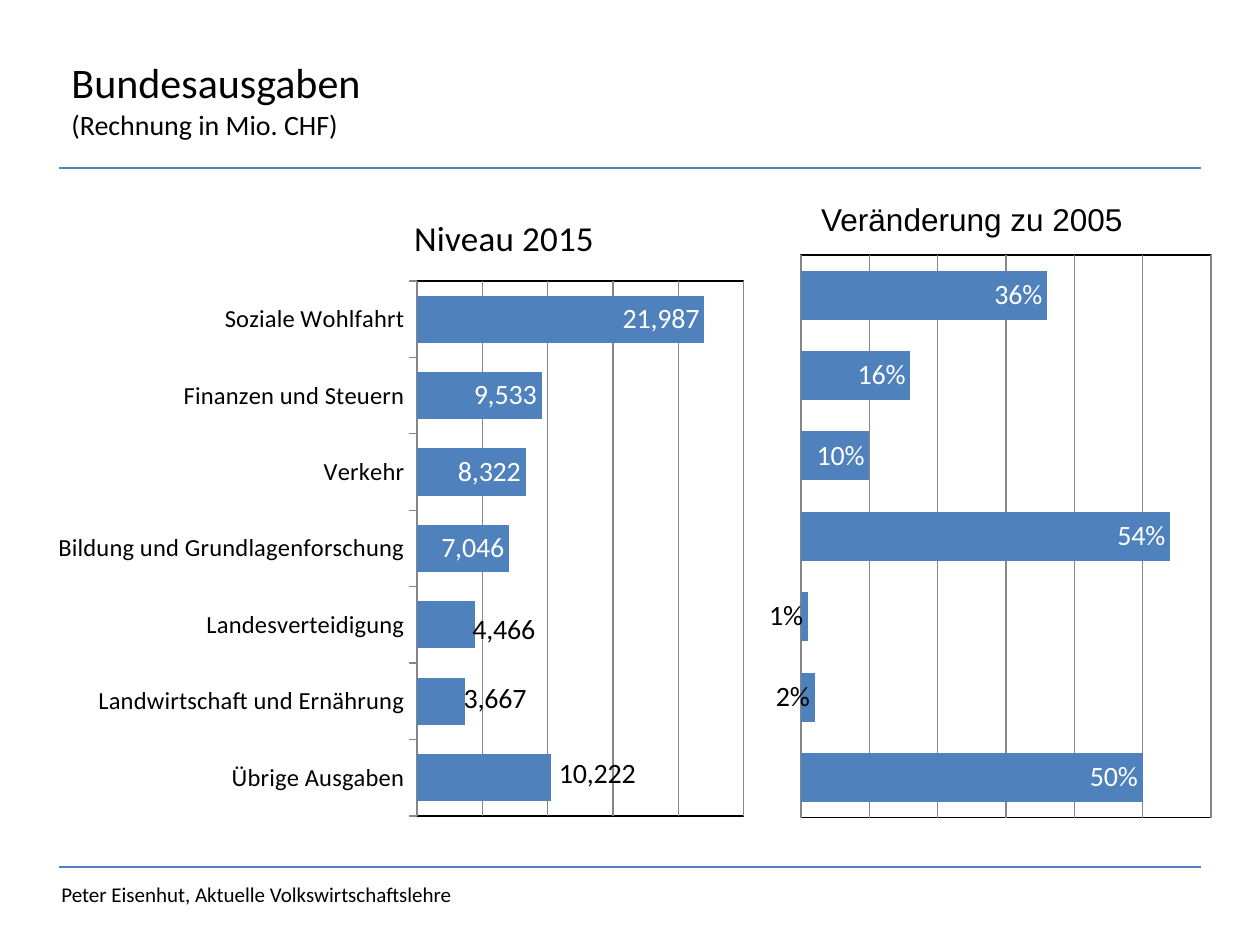
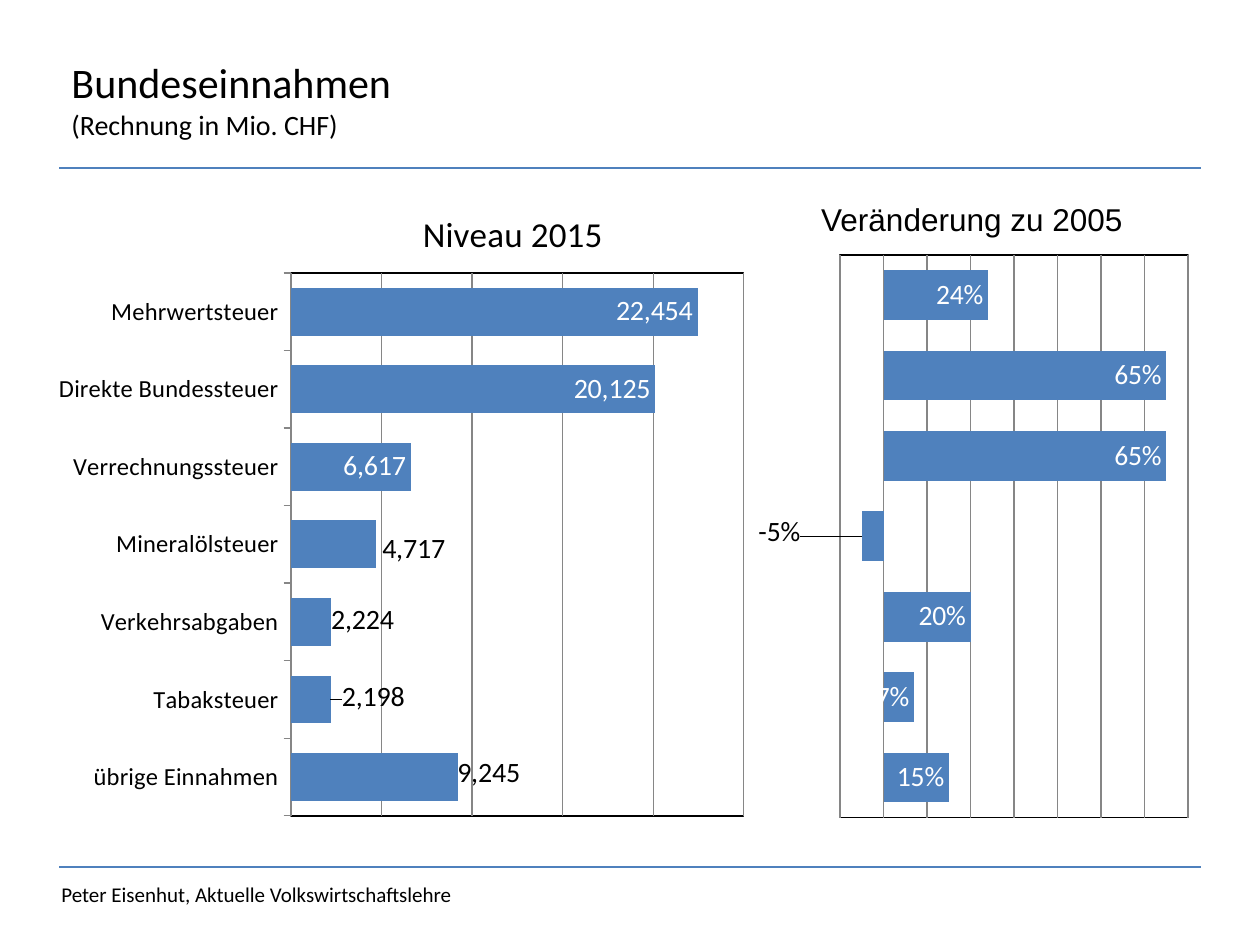
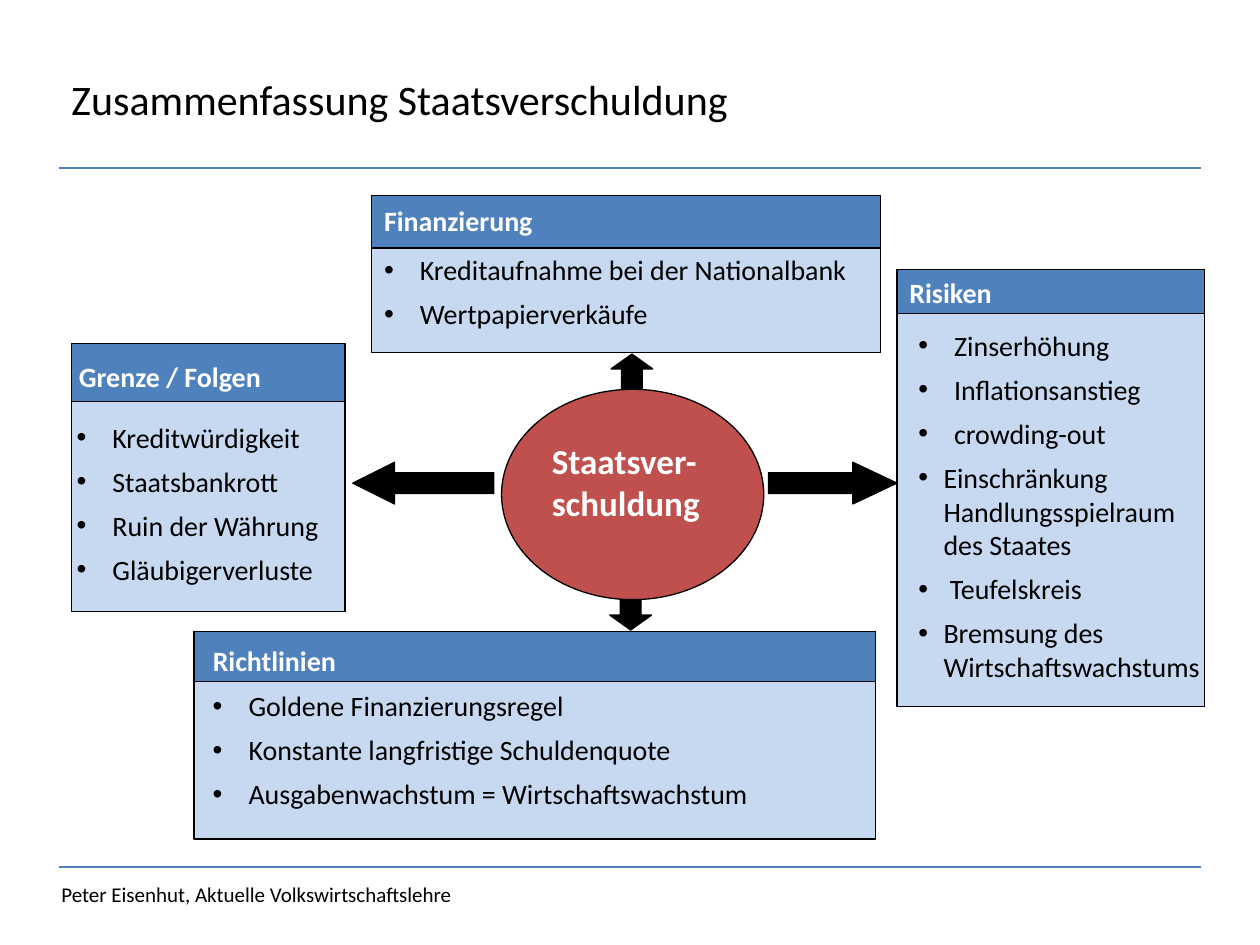
from lxml import etree
from pptx import Presentation
from pptx.chart.data import CategoryChartData
from pptx.dml.color import RGBColor
from pptx.enum.chart import XL_CHART_TYPE, XL_LABEL_POSITION, XL_TICK_MARK
from pptx.enum.shapes import MSO_CONNECTOR, MSO_SHAPE
from pptx.enum.text import MSO_ANCHOR
from pptx.oxml.ns import qn
from pptx.util import Pt

BAR = XL_CHART_TYPE.BAR_CLUSTERED
INSIDE, OUTSIDE = XL_LABEL_POSITION.INSIDE_END, XL_LABEL_POSITION.OUTSIDE_END
TICK_OUT, TICK_NONE = XL_TICK_MARK.OUTSIDE, XL_TICK_MARK.NONE
STRAIGHT = MSO_CONNECTOR.STRAIGHT
MIDDLE, TOP = MSO_ANCHOR.MIDDLE, MSO_ANCHOR.TOP
RECT, ELLIPSE = MSO_SHAPE.RECTANGLE, MSO_SHAPE.OVAL
LEFT_ARROW, RIGHT_ARROW = MSO_SHAPE.LEFT_ARROW, MSO_SHAPE.RIGHT_ARROW
UP_ARROW, DOWN_ARROW = MSO_SHAPE.UP_ARROW, MSO_SHAPE.DOWN_ARROW

BLUE, PALE, RED = "4F81BD", "C6D9F1", "C0504D"
BLACK, WHITE, GREY = "000000", "FFFFFF", "868686"
FONT = "Calibri"
FOOTER = "Peter Eisenhut, Aktuelle Volkswirtschaftslehre"
UNIT = "(Rechnung in Mio. CHF)"
BULLET_INDENT = 20.5


def color(value):
    return RGBColor.from_string(value)


def style_font(font, size, fill=BLACK, bold=False, name=FONT):
    font.name, font.size, font.bold = name, Pt(size), bold
    font.color.rgb = color(fill)


def style_line(line, fill, width=0.75):
    line.color.rgb = color(fill)
    line.width = Pt(width)


def set_layout(parent, index, **settings):
    """Give a chart part a manual position, in fractions of the chart."""
    for old in parent.findall(qn("c:layout")):
        parent.remove(old)
    layout = etree.Element(qn("c:layout"))
    manual = etree.SubElement(layout, qn("c:manualLayout"))
    for key, value in settings.items():
        text = value if isinstance(value, str) else f"{value:.4f}"
        etree.SubElement(manual, qn("c:" + key)).set("val", text)
    parent.insert(index, layout)


class Deck:
    """Shared style plus the current page; all lengths in points."""

    def __init__(self):
        self.deck = Presentation()
        self.deck.slide_width, self.deck.slide_height = Pt(720), Pt(540)
        self.page = None

    def new_page(self, title, subtitle=None):
        self.page = self.deck.slides.add_slide(self.deck.slide_layouts[6])
        for y in (95.8, 495.4):
            self.rule(33.8, y, 686.2)
        self.text(28, 500.4, 433, 21.6, [FOOTER], 12)
        heading = title + "\v" + subtitle if subtitle else title
        box = self.text(33.8, 11.5, 568, 90, [heading], 24, anchor=MIDDLE)
        if subtitle:
            box.text_frame.paragraphs[0].runs[1].font.size = Pt(16)

    def rule(self, left, y, right):
        line = self.page.shapes.add_connector(STRAIGHT, Pt(left), Pt(y), Pt(right), Pt(y))
        style_line(line.line, BLUE, 1.25)
        etree.SubElement(line.element.spPr, qn("a:effectLst"))

    def text(self, left, top, width, height, lines, size, fill=BLACK,
             bold=False, name=FONT, anchor=TOP, space=0):
        box = self.page.shapes.add_textbox(Pt(left), Pt(top), Pt(width), Pt(height))
        frame = box.text_frame
        frame.word_wrap, frame.vertical_anchor = True, anchor
        frame.text = "\n".join(lines)
        for para in frame.paragraphs:
            para.space_before = Pt(space)
            for span in para.runs:
                style_font(span.font, size, fill, bold, name)
        return box

    def bullets(self, left, top, width, height, items):
        """Items are texts, or pairs of text and hanging indent."""
        pairs = [item if isinstance(item, tuple) else (item, BULLET_INDENT) for item in items]
        box = self.text(left, top, width, height, [item for item, _ in pairs], 16, space=6)
        for para, (_, indent) in zip(box.text_frame.paragraphs, pairs):
            props = para._p.get_or_add_pPr()
            props.set("marL", str(int(Pt(indent))))
            props.set("indent", str(-int(Pt(indent))))
            etree.SubElement(props, qn("a:buFont")).set("typeface", "Arial")
            etree.SubElement(props, qn("a:buChar")).set("char", "•")

    def shape(self, kind, left, top, width, height, fill, adjustments=()):
        shape = self.page.shapes.add_shape(kind, Pt(left), Pt(top), Pt(width), Pt(height))
        shape.shadow.inherit = False
        shape.fill.solid()
        shape.fill.fore_color.rgb = color(fill)
        style_line(shape.line, BLACK)
        for index, value in enumerate(adjustments):
            shape.adjustments[index] = value

    def panel(self, left, top, width, height, head, heading, heading_at, items, items_at):
        self.shape(RECT, left, top, width, height, PALE)
        self.shape(RECT, left, top, width, head, BLUE)
        self.text(*heading_at, width, 26, [heading], 16, WHITE, bold=True)
        self.bullets(*items_at, width + 26, top + height - items_at[1], items)

    def bar_chart(self, box, plot, names, values, number, scale, gap,
                  outer=None, dark=(), title=None, title_at=None):
        """outer maps a point to its label's shift; dark lists points with black labels."""
        left, top, width, height = box
        data = CategoryChartData(number_format=number)
        data.categories = names
        data.add_series("Series 1", values)
        chart = self.page.shapes.add_chart(BAR, *(Pt(length) for length in box), data).chart
        chart.has_legend = False
        style_font(chart.font, 14)

        # Title
        chart.has_title = title is not None
        if title:
            frame = chart.chart_title.text_frame
            frame.text = title
            style_font(frame.paragraphs[0].runs[0].font, 20)
            set_layout(chart.element.xpath("c:chart/c:title")[0], 1, xMode="edge", yMode="edge",
                       x=(title_at[0] - left) / width, y=(title_at[1] - top) / height)

        # Axes
        low, high, step = scale
        value_axis, name_axis = chart.value_axis, chart.category_axis
        value_axis.minimum_scale, value_axis.maximum_scale = low, high
        value_axis.major_unit = step
        value_axis.has_major_gridlines = True
        style_line(value_axis.major_gridlines.format.line, GREY)
        value_axis.visible = False
        name_axis.visible = title is not None
        name_axis.major_tick_mark, name_axis.minor_tick_mark = TICK_OUT, TICK_NONE
        style_line(name_axis.format.line, GREY)

        # Bars and labels
        bars = chart.plots[0]
        bars.gap_width, bars.vary_by_categories = gap, False
        series = bars.series[0]
        series.invert_if_negative = False
        series.format.fill.solid()
        series.format.fill.fore_color.rgb = color(BLUE)
        labels = series.data_labels
        labels.show_value, labels.position = True, INSIDE
        labels.number_format, labels.number_format_is_linked = number, False
        style_font(labels.font, 16, WHITE)
        shifts = outer or {}
        for index in (*shifts, *dark):
            label = series.points[index].data_label
            style_font(label.font, 16)
            label.position = OUTSIDE if index in shifts else INSIDE
        for index, (right, down) in shifts.items():
            element = series._element.xpath(f"c:dLbls/c:dLbl[c:idx/@val='{index}']")[0]
            set_layout(element, 1, x=right / width, y=down / height)

        # Plot frame
        area = chart.element.xpath("c:chart/c:plotArea")[0]
        plot_left, plot_top, plot_right, plot_bottom = plot
        set_layout(area, 0, layoutTarget="inner", xMode="edge", yMode="edge",
                   x=(plot_left - left) / width, y=(plot_top - top) / height,
                   w=(plot_right - plot_left) / width, h=(plot_bottom - plot_top) / height)
        border = etree.SubElement(etree.SubElement(area, qn("c:spPr")), qn("a:ln"), w="9525")
        paint = etree.SubElement(border, qn("a:solidFill"))
        etree.SubElement(paint, qn("a:srgbClr")).set("val", BLACK)

    def budget_page(self, title, level, change):
        """Amounts on the left, change since 2005 on the right."""
        self.new_page(title, UNIT)
        self.bar_chart(box=(25.2, 105.8, 408.2, 368.6), number="#,##0",
                       scale=(0, 25000, 5000), gap=62, title="Niveau 2015", **level)
        self.text(462.2, 110.9, 209.5, 28.8, ["Veränderung zu 2005"], 18, name="Arial")
        self.bar_chart(names=[str(n) for n in range(1, 8)], number="0%", **change)


def main():
    deck = Deck()

    # Federal spending
    deck.budget_page(
        "Bundesausgaben",
        dict(plot=(238.3, 160.6, 425.1, 466.3), title_at=(233, 118),
             names=["Übrige Ausgaben", "Landwirtschaft und Ernährung", "Landesverteidigung",
                    "Bildung und Grundlagenforschung", "Verkehr", "Finanzen und Steuern",
                    "Soziale Wohlfahrt"],
             values=[10222, 3667, 4466, 7046, 8322, 9533, 21987],
             outer={0: (2, -2), 1: (-3.5, -1), 2: (-4.5, 3)}),
        dict(box=(439.2, 139.7, 257.8, 334.8), plot=(457.7, 145.7, 692, 467.4),
             values=[0.5, 0.02, 0.01, 0.54, 0.1, 0.16, 0.36],
             scale=(0, 0.6, 0.1), gap=64, dark=(1, 2)))

    # Federal revenue
    deck.budget_page(
        "Bundeseinnahmen",
        dict(plot=(166.3, 156, 425.1, 466.3), title_at=(238, 116),
             names=["übrige Einnahmen", "Tabaksteuer", "Verkehrsabgaben", "Mineralölsteuer",
                    "Verrechnungssteuer", "Direkte Bundessteuer", "Mehrwertsteuer"],
             values=[9245, 2198, 2224, 4717, 6617, 20125, 22454],
             outer={0: (-3.5, -2), 1: (3.5, -1), 2: (-3, -1), 3: (0.5, 3)}),
        dict(box=(433.4, 139.7, 249.1, 334.8), plot=(477.1, 145.7, 678.9, 467.4),
             values=[0.15, 0.07, 0.2, -0.05, 0.65, 0.65, 0.24],
             scale=(-0.1, 0.7, 0.1), gap=62, outer={3: (-33, -2)}))

    # Summary of public debt
    deck.new_page("Zusammenfassung Staatsverschuldung")
    deck.panel(41, 196.5, 156.2, 152.8, 33, "Grenze / Folgen", (38, 202),
               ["Kreditwürdigkeit", "Staatsbankrott", "Ruin der Währung",
                "Gläubigerverluste"], (36.7, 236.5))
    deck.panel(512.6, 154.1, 175.7, 249.8, 25.2, "Risiken", (512.6, 154.1),
               ["Zinserhöhung", "Inflationsanstieg", "crowding-out",
                ("Einschränkung Handlungsspielraum\vdes Staates", 14.4),
                ("Teufelskreis", 18), ("Bremsung des Wirtschaftswachstums", 14.4)],
               (517.7, 184))

    # Arrows from the centre
    for kind, left, top, width, height, head in (
            (LEFT_ARROW, 201.6, 264.2, 80.6, 23.8, 1),
            (RIGHT_ARROW, 439.2, 264.2, 73.4, 23.8, 1.06),
            (DOWN_ARROW, 348.5, 337.7, 23.8, 22.3, 0.38),
            (UP_ARROW, 349.2, 202.3, 23.8, 22.3, 0.38)):
        deck.shape(kind, left, top, width, height, BLACK, (0.5, head))

    deck.panel(212.4, 111.6, 290.9, 90, 30.2, "Finanzierung", (212.4, 113),
               ["Kreditaufnahme bei der Nationalbank", "Wertpapierverkäufe"], (212.4, 141))
    deck.panel(110.9, 360.7, 389.5, 118.8, 28.8, "Richtlinien", (114.5, 364.3),
               ["Goldene Finanzierungsregel", "Konstante langfristige Schuldenquote",
                "Ausgabenwachstum = Wirtschaftswachstum"], (114.5, 390))
    deck.shape(ELLIPSE, 286.6, 222.5, 149.8, 120.2, RED)
    deck.text(308.2, 247.7, 138.2, 55.4, ["Staatsver-schuldung"], 20, WHITE, bold=True)

    deck.deck.save("out.pptx")


if __name__ == "__main__":
    main()
